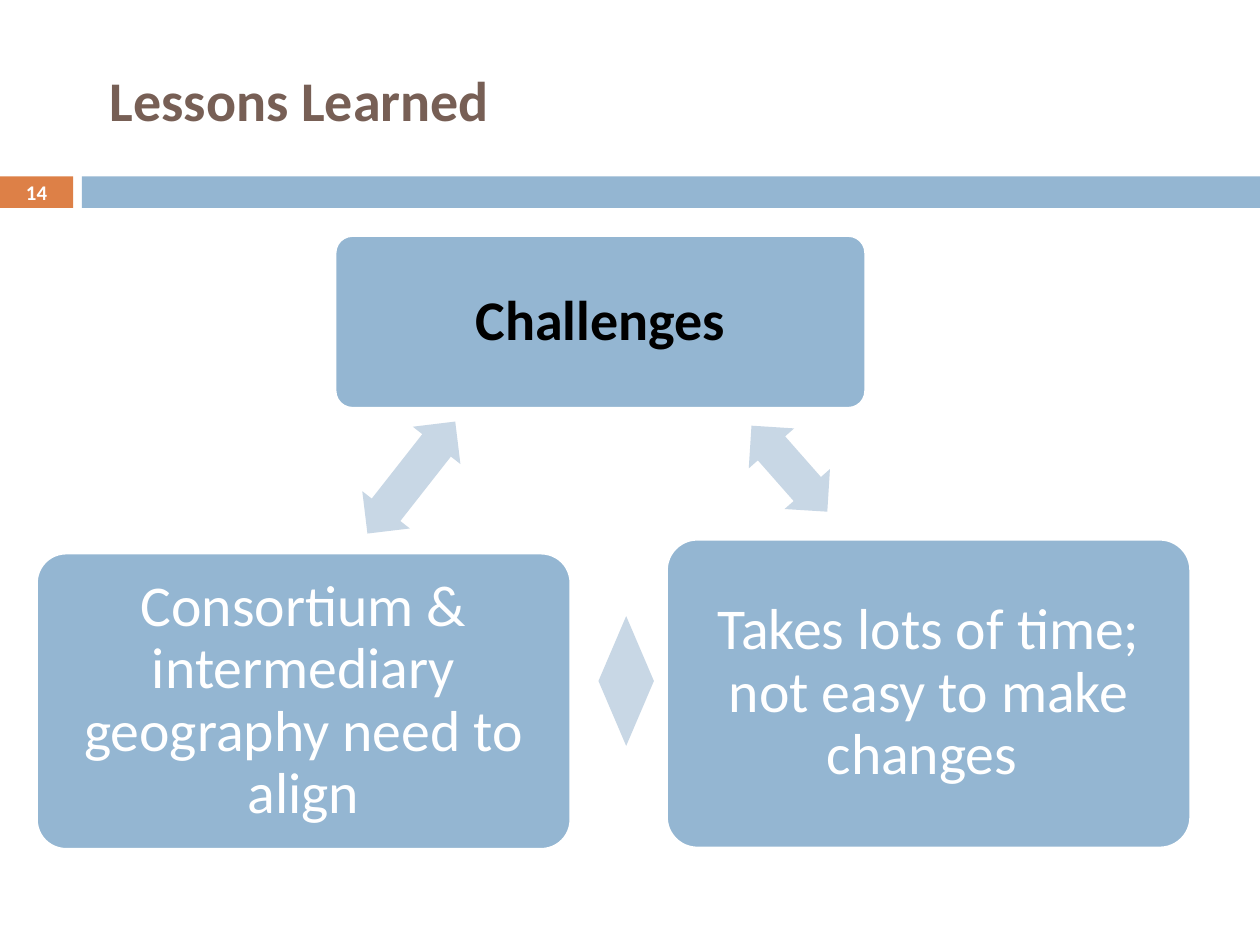
from pptx import Presentation
from pptx.dml.color import RGBColor
from pptx.enum.shapes import MSO_SHAPE
from pptx.enum.text import MSO_ANCHOR, PP_ALIGN
from pptx.util import Inches, Pt

RECT = MSO_SHAPE.RECTANGLE
ROUND = MSO_SHAPE.ROUNDED_RECTANGLE
ARROW = MSO_SHAPE.LEFT_RIGHT_ARROW
MIDDLE = MSO_ANCHOR.MIDDLE
LEFT, CENTER = PP_ALIGN.LEFT, PP_ALIGN.CENTER
BLUE, PALE, ORANGE = "94B6D2", "C8D7E5", "DD8047"
BROWN, WHITE, BLACK = "775F55", "FFFFFF", "000000"

CARDS = [
    ("Challenges", (2.66, 1.87, 4.21, 1.37), 0.13, 32, BLACK, True),
    ("Takes lots of time; not easy to make changes ",
     (5.29, 4.28, 4.16, 2.45), 0.14, 33, WHITE, False),
    ("Consortium & intermediary geography need to align",
     (0.29, 4.39, 4.24, 2.35), 0.14, 33, WHITE, False),
]
ARROWS = [
    ((5.81, 3.48, 0.91, 0.48), 48.6),
    ((4.75, 4.89, 0.44, 1.03), 0),
    ((2.7, 3.55, 1.13, 0.48), 308.1),
]


def color(code):
    """Return the colour for a hex string."""
    return RGBColor.from_string(code)


def assign(item, values):
    """Set attributes of an item from a dict."""
    for name, value in values.items():
        setattr(item, name, value)


def write(shape, text, size, ink, bold=True, align=CENTER, inset=None, space=None):
    """Put one formatted paragraph into a shape."""
    frame = shape.text_frame
    assign(frame, {"text": text, "word_wrap": True, "vertical_anchor": MIDDLE})
    if inset is not None:
        sides = ("left", "top", "right", "bottom")
        assign(frame, {f"margin_{side}": Inches(inset) for side in sides})
    para = frame.paragraphs[0]
    assign(para, {"alignment": align, "line_spacing": space})
    font = para.runs[0].font
    assign(font, {"name": "Calibri", "size": Pt(size), "bold": bold})
    font.color.rgb = color(ink)


def draw(slide, kind, box, fill, adjust=()):
    """Add a flat filled shape without an outline."""
    shape = slide.shapes.add_shape(kind, *map(Inches, box))
    shape.shadow.inherit = False
    shape.fill.solid()
    shape.fill.fore_color.rgb = color(fill)
    shape.line.fill.background()
    for index, value in enumerate(adjust):
        shape.adjustments[index] = value
    return shape


def head(slide):
    """Place the title, the band and the page number."""
    title = slide.shapes.title
    names = ("left", "top", "width", "height")
    assign(title, dict(zip(names, map(Inches, (0.67, 0.25, 8.92, 1.08)))))
    write(title, " Lessons Learned", 32, BROWN, align=LEFT)
    page = draw(slide, RECT, (0, 1.4, 0.58, 0.25), ORANGE)
    write(page, "14", 11.9, WHITE, inset=0)
    draw(slide, RECT, (0.65, 1.4, 9.35, 0.25), BLUE)


def card(slide, text, box, inset, size, ink, bold):
    """Add a rounded card with a white outline and centred text."""
    shape = draw(slide, ROUND, box, BLUE, [0.1])
    shape.line.color.rgb = color(WHITE)
    shape.line.width = Pt(1.5)
    write(shape, text, size, ink, bold, inset=inset, space=0.9)


def main():
    """Build and save the slide."""
    deck = Presentation()
    assign(deck, {"slide_width": Inches(10), "slide_height": Inches(7.5)})
    slide = deck.slides.add_slide(deck.slide_layouts[5])
    head(slide)
    for item in CARDS:
        card(slide, *item)
    for box, angle in ARROWS:
        draw(slide, ARROW, box, PALE, [0.6, 0.5]).rotation = angle
    deck.save("out.pptx")


if __name__ == "__main__":
    main()
